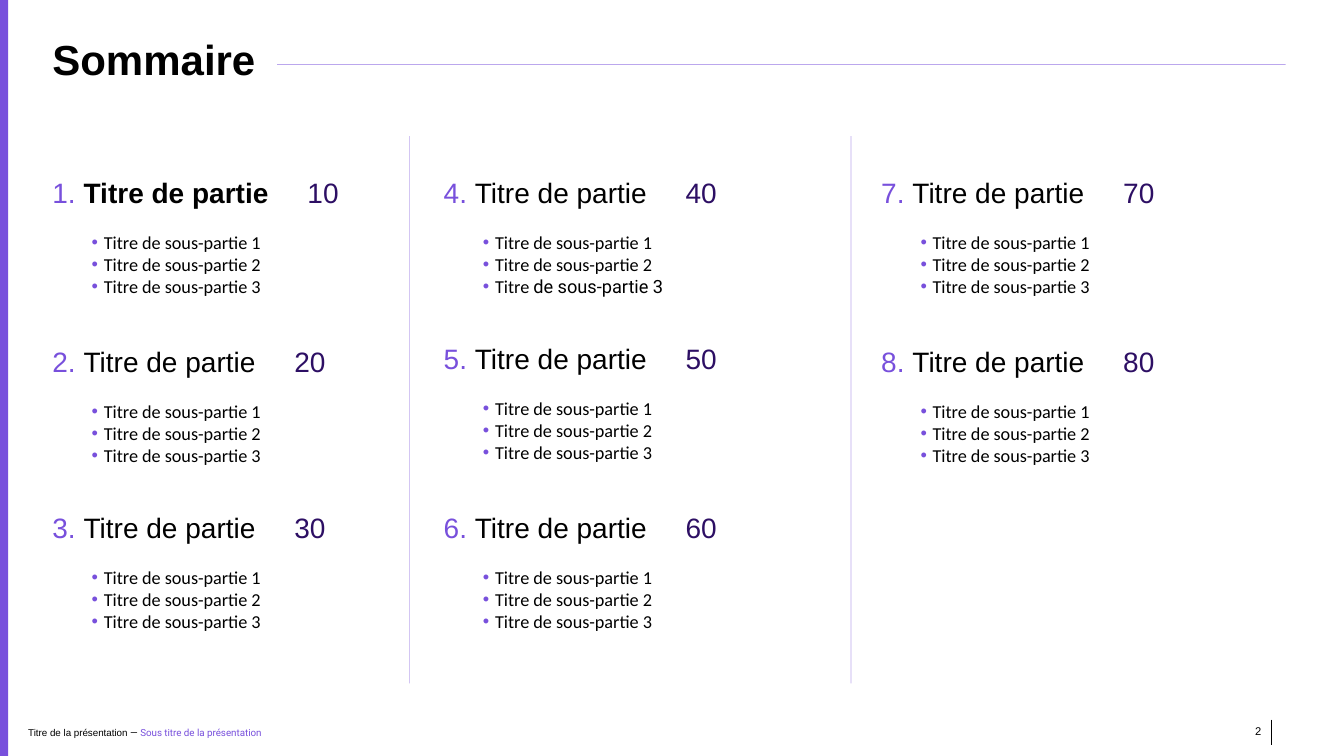
from lxml.etree import SubElement
from pptx import Presentation
from pptx.dml.color import RGBColor
from pptx.enum.shapes import MSO_CONNECTOR, MSO_SHAPE
from pptx.enum.text import MSO_ANCHOR as Anchor, MSO_AUTO_SIZE as AutoSize, PP_ALIGN as Align
from pptx.oxml.ns import qn
from pptx.util import Inches, Pt

VIOLET = RGBColor(0x78, 0x50, 0xDC)
INDIGO = RGBColor(0x2D, 0x0F, 0x64)
BLACK = RGBColor(0, 0, 0)

deck = Presentation()
deck.slide_width, deck.slide_height = Inches(13.33), Inches(7.5)
page = deck.slides.add_slide(deck.slide_layouts[6])
column = deck.slide_width / 100
row = deck.slide_height / 100


def add_text_box(left, top, width, height, insets=(0, 0, 0, 0)):
    box = page.shapes.add_textbox(
        int(left * column), int(top * row), int(width * column), int(height * row))
    frame = box.text_frame
    frame.word_wrap = True
    frame.margin_left, frame.margin_top, frame.margin_right, frame.margin_bottom = map(Inches, insets)
    return frame


def add_span(para, text, size, color=BLACK, font="Arial", bold=False):
    span = para.add_run()
    span.text = text
    span.font.size = Pt(size)
    span.font.name = font
    span.font.bold = bold
    span.font.color.rgb = color


bar = page.shapes.add_shape(MSO_SHAPE.RECTANGLE, 0, 0, int(0.6 * column), deck.slide_height)
bar.shadow.inherit = False
bar.fill.solid()
bar.fill.fore_color.rgb = VIOLET
bar.line.fill.background()

heading = add_text_box(3.9, 4.4, 19.88, 6.67)
heading.auto_size = AutoSize.SHAPE_TO_FIT_TEXT
add_span(heading.paragraphs[0], "Sommaire", 30, bold=True)

page_number = add_text_box(90.47, 95.33, 4.13, 2.67, (0.1, 0.05, 0.1, 0.05))
page_number.vertical_anchor = Anchor.MIDDLE
page_number.paragraphs[0].alignment = Align.RIGHT
add_span(page_number.paragraphs[0], "2", 8)

footer = add_text_box(0.6, 94.67, 33.76, 4.4, (0.2, 0, 0, 0))
footer.vertical_anchor = Anchor.MIDDLE
add_span(footer.paragraphs[0], "Titre de la présentation ", 7)
add_span(footer.paragraphs[0], "— ", 7, font="Roboto")
add_span(footer.paragraphs[0], "Sous titre de la présentation", 7, VIOLET, "Roboto")

WIDE_GAP, NARROW_GAP = 34.2, 31.7
contents = [
    (3.9, 32.41, 60.53, 1, [0, WIDE_GAP, NARROW_GAP]),
    (33.01, 32.41, 60.53, 4, [0, NARROW_GAP, WIDE_GAP]),
    (65.57, 31.06, 38.53, 7, [0, WIDE_GAP]),
]
for left, width, height, first_part, gaps in contents:
    frame = add_text_box(left, 23.2, width, height)
    frame.auto_size = AutoSize.SHAPE_TO_FIT_TEXT
    for part, gap in enumerate(gaps, first_part):
        para = frame.paragraphs[0] if part == first_part else frame.add_paragraph()
        para.space_before = Pt(gap)
        is_current = part == 1
        tabs = SubElement(para._p.get_or_add_pPr(), qn("a:tabLst"))
        SubElement(tabs, qn("a:tab"), pos=str(Inches(2.53 if is_current else 2.4)), algn="l")
        add_span(para, f"{part}. ", 20, VIOLET)
        add_span(para, "Titre de partie\t", 20, bold=is_current)
        add_span(para, f"{part}0", 20, INDIGO)

        for item in range(1, 4):
            para = frame.add_paragraph()
            para.level = 1
            para.space_before = Pt(15.9 if item == 1 else 0)
            properties = para._p.get_or_add_pPr()
            properties.set("marL", str(Inches(0.51)))
            properties.set("indent", str(Inches(-0.12)))
            bullet_color = SubElement(properties, qn("a:buClr"))
            SubElement(bullet_color, qn("a:srgbClr"), val=str(VIOLET))
            SubElement(properties, qn("a:buFont"), typeface="Arial")
            SubElement(properties, qn("a:buChar"), char="•")
            ending_font = "Roboto" if (part, item) == (4, 3) else "Calibri"
            add_span(para, "Titre ", 13, font="Calibri")
            add_span(para, f"de sous-partie {item}", 13, font=ending_font)

rules = [
    (95.65, 8.53, 20.63, 8.53, VIOLET, 50),
    (94.6, 95.2, 94.6, 98.53, BLACK, 100),
    (30.46, 18, 30.46, 90.4, VIOLET, 50),
    (63.32, 18, 63.32, 90.4, VIOLET, 50),
]
for start_x, start_y, end_x, end_y, color, opacity in rules:
    rule = page.shapes.add_connector(
        MSO_CONNECTOR.STRAIGHT,
        int(start_x * column), int(start_y * row), int(end_x * column), int(end_y * row))
    rule.line.width = Pt(0.5)
    rule.line.color.rgb = color
    tint = rule.line._ln.find(".//" + qn("a:srgbClr"))
    SubElement(tint, qn("a:alpha"), val=str(opacity * 1000))
    SubElement(rule._element.spPr, qn("a:effectLst"))

deck.save("out.pptx")
